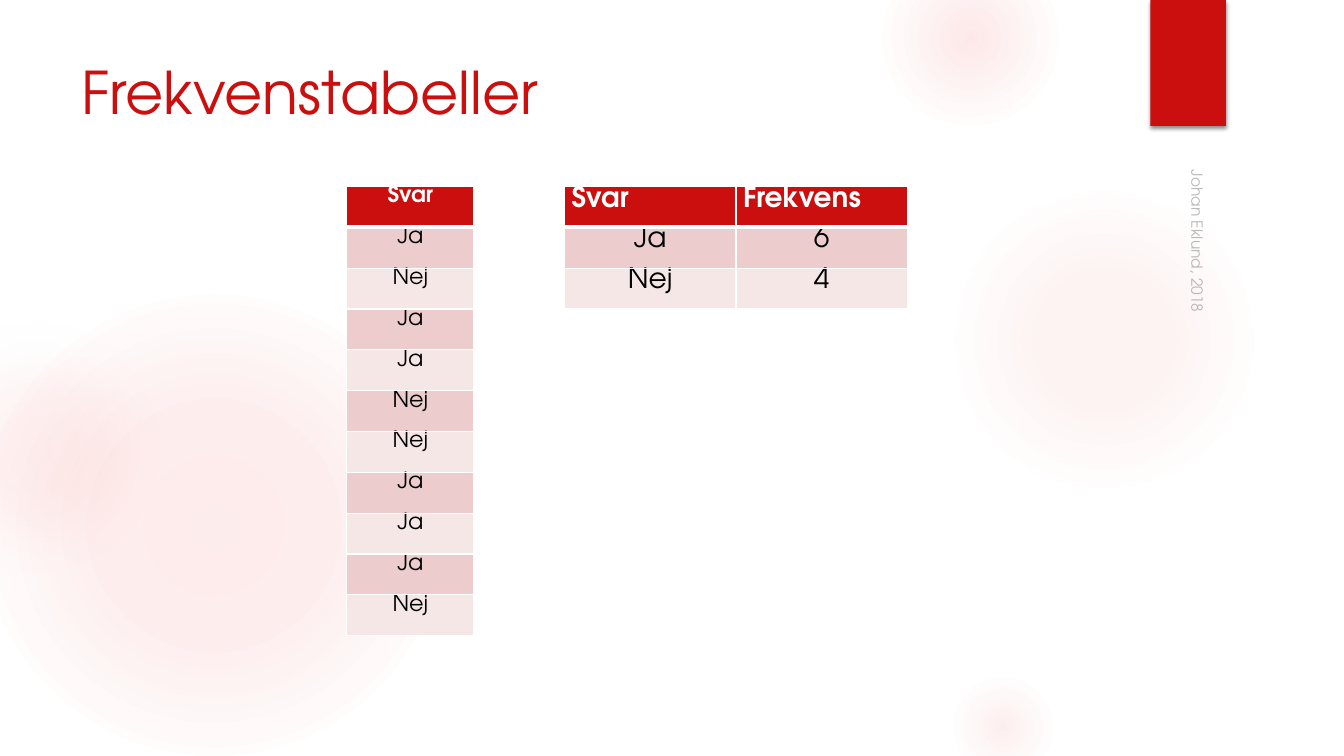
from dataclasses import dataclass

import pptx
import pptx.dml.color
import pptx.enum.shapes
import pptx.enum.text
import pptx.oxml
import pptx.oxml.ns
import pptx.util
from pptx.util import Inches

ALIGN = pptx.enum.text.PP_ALIGN
ANCHOR = pptx.enum.text.MSO_ANCHOR
SHAPE = pptx.enum.shapes.MSO_SHAPE


@dataclass(frozen=True)
class Theme:
    """Colours, font and type sizes of the slide."""
    font: str = "TeX Gyre Adventor"
    red: str = "CB0F0F"
    glow: str = "F35C5C"
    pale: str = "F3F3F3"
    white: str = "FFFFFF"
    black: str = "000000"
    grey: str = "8C8C8C"
    bands: tuple = ("ECCCCC", "F6E7E7")
    title_size: int = 42
    answer_size: int = 16
    frequency_size: int = 20
    credit_size: int = 11


THEME = Theme()
ANSWERS = ["Ja", "Nej", "Ja", "Ja", "Nej", "Nej", "Ja", "Ja", "Ja", "Nej"]
ROW_HEIGHT = Inches(4.46 / 11)
GLOWS = [
    (-0.17, 2.92, 4.58, [(0, 11), (36, 10), (75, 0)], THEME.glow),
    (-0.92, 3.17, 2.58, [(0, 8), (36, 5), (71, 0)], THEME.pale),
    (9.41, 1.83, 3.08, [(0, 7), (36, 6), (69, 0)], THEME.glow),
    (8.75, -0.5, 1.75, [(0, 14), (36, 7), (73, 0)], THEME.glow),
    (9.41, 6.67, 1.08, [(0, 10), (31, 5), (66, 0)], THEME.glow),
]


def parse_drawing(markup):
    """Parse markup whose root element carries the NS marker."""
    return pptx.oxml.parse_xml(markup.replace("NS", pptx.oxml.ns.nsdecls("a"), 1))


def colour_of(code):
    """Turn a hex code into a colour."""
    return pptx.dml.color.RGBColor.from_string(code)


def add_run(paragraph, text, size, colour, bold=False):
    """Add one formatted run and return it."""
    run = paragraph.add_run()
    run.text = text
    run.font.name = THEME.font
    run.font.size = pptx.util.Pt(size)
    run.font.bold = bold
    run.font.color.rgb = colour_of(colour)
    return run


def add_glow(slide, left, top, size, stops, edge):
    """Add a circle that fades out from its centre."""
    circle = slide.shapes.add_shape(
        SHAPE.OVAL, Inches(left), Inches(top), Inches(size), Inches(size))
    circle.shadow.inherit = False
    circle.line.fill.background()
    colours = [THEME.glow, THEME.glow, edge]
    marks = "".join(
        f'<a:gs pos="{position * 1000}"><a:srgbClr val="{colour}">'
        f'<a:alpha val="{alpha * 1000}"/></a:srgbClr></a:gs>'
        for (position, alpha), colour in zip(stops, colours))
    gradient = parse_drawing(
        f'<a:gradFill NS rotWithShape="1"><a:gsLst>{marks}</a:gsLst><a:path path="circle">'
        '<a:fillToRect l="50000" t="50000" r="50000" b="50000"/></a:path></a:gradFill>')
    geometry = circle.element.spPr.find(pptx.oxml.ns.qn("a:prstGeom"))
    geometry.addnext(gradient)


def add_ribbon(slide):
    """Add the red ribbon with its soft shadow."""
    ribbon = slide.shapes.add_shape(
        SHAPE.RECTANGLE, Inches(11.41), 0, Inches(0.75), Inches(1.25))
    ribbon.fill.solid()
    ribbon.fill.fore_color.rgb = colour_of(THEME.red)
    ribbon.line.fill.background()
    ribbon.element.spPr.append(parse_drawing(
        '<a:effectLst NS><a:outerShdw blurRad="38100" dist="25400" dir="5400000" '
        f'rotWithShape="0"><a:srgbClr val="{THEME.black}"><a:alpha val="45000"/>'
        '</a:srgbClr></a:outerShdw></a:effectLst>'))


def set_title(slide, text):
    """Place the title in front of the background shapes."""
    title = slide.shapes.title
    title.left, title.top = Inches(0.71), Inches(0.5)
    title.width, title.height = Inches(10.29), Inches(1.53)
    frame = title.text_frame
    frame.vertical_anchor = ANCHOR.TOP
    frame.paragraphs[0].alignment = ALIGN.LEFT
    add_run(frame.paragraphs[0], text, THEME.title_size, THEME.red)
    title.element.getparent().append(title.element)


def set_borders(cell, top, bottom):
    """Draw white cell borders with the given top and bottom widths."""
    widths = {"L": 1, "R": 1, "T": top, "B": bottom}
    properties = cell._tc.get_or_add_tcPr()
    for index, (side, width) in enumerate(widths.items()):
        properties.insert(index, parse_drawing(
            f'<a:ln{side} NS w="{pptx.util.Pt(width)}"><a:solidFill>'
            f'<a:srgbClr val="{THEME.white}"/></a:solidFill></a:ln{side}>'))


def fill_cell(cell, text, row, size, alignment):
    """Format one table cell by its row number."""
    header = row == 0
    cell.margin_left = cell.margin_right = Inches(0.07)
    cell.margin_top = cell.margin_bottom = 0
    cell.fill.solid()
    cell.fill.fore_color.rgb = colour_of(THEME.red if header else THEME.bands[(row - 1) % 2])
    set_borders(cell, 3 if row == 1 else 1, 3 if header else 1)
    paragraph = cell.text_frame.paragraphs[0]
    paragraph.alignment = alignment
    add_run(paragraph, text, size, THEME.white if header else THEME.black, header)


def add_table(slide, left, column_width, rows, size, header_alignment):
    """Add a banded table with a red header row."""
    columns = len(rows[0])
    table = slide.shapes.add_table(
        len(rows), columns, Inches(left), Inches(1.85),
        Inches(column_width * columns), ROW_HEIGHT * len(rows)).table
    for column in table.columns:
        column.width = Inches(column_width)
    for row, values in enumerate(rows):
        table.rows[row].height = ROW_HEIGHT
        for column, text in enumerate(values):
            alignment = ALIGN.CENTER if row else header_alignment
            fill_cell(table.cell(row, column), text, row, size, alignment)


def add_credit(slide, text):
    """Add the sideways credit line under the ribbon."""
    box = slide.shapes.add_textbox(Inches(9.79), Inches(3.53), Inches(4.22), Inches(0.33))
    box.rotation = 90
    frame = box.text_frame
    frame.word_wrap = True
    frame.vertical_anchor = ANCHOR.BOTTOM
    run = add_run(frame.paragraphs[0], text, THEME.credit_size, THEME.grey)
    colour = run.font._element.find(".//" + pptx.oxml.ns.qn("a:srgbClr"))
    colour.append(parse_drawing('<a:alpha NS val="60000"/>'))


def main():
    """Build the slide and save it."""
    presentation = pptx.Presentation()
    presentation.slide_width, presentation.slide_height = Inches(13.33), Inches(7.5)
    slide = presentation.slides.add_slide(presentation.slide_layouts[5])
    for glow in GLOWS:
        add_glow(slide, *glow)
    add_ribbon(slide)
    set_title(slide, "Frekvenstabeller")
    answers = [["Svar"]] + [[answer] for answer in ANSWERS]
    add_table(slide, 3.44, 1.26, answers, THEME.answer_size, ALIGN.CENTER)
    frequencies = [["Svar", "Frekvens"]] + [
        [answer, str(ANSWERS.count(answer))] for answer in ("Ja", "Nej")]
    add_table(slide, 5.6, 1.7, frequencies, THEME.frequency_size, ALIGN.LEFT)
    add_credit(slide, "Johan Eklund, 2018")
    presentation.save("out.pptx")


if __name__ == "__main__":
    main()
